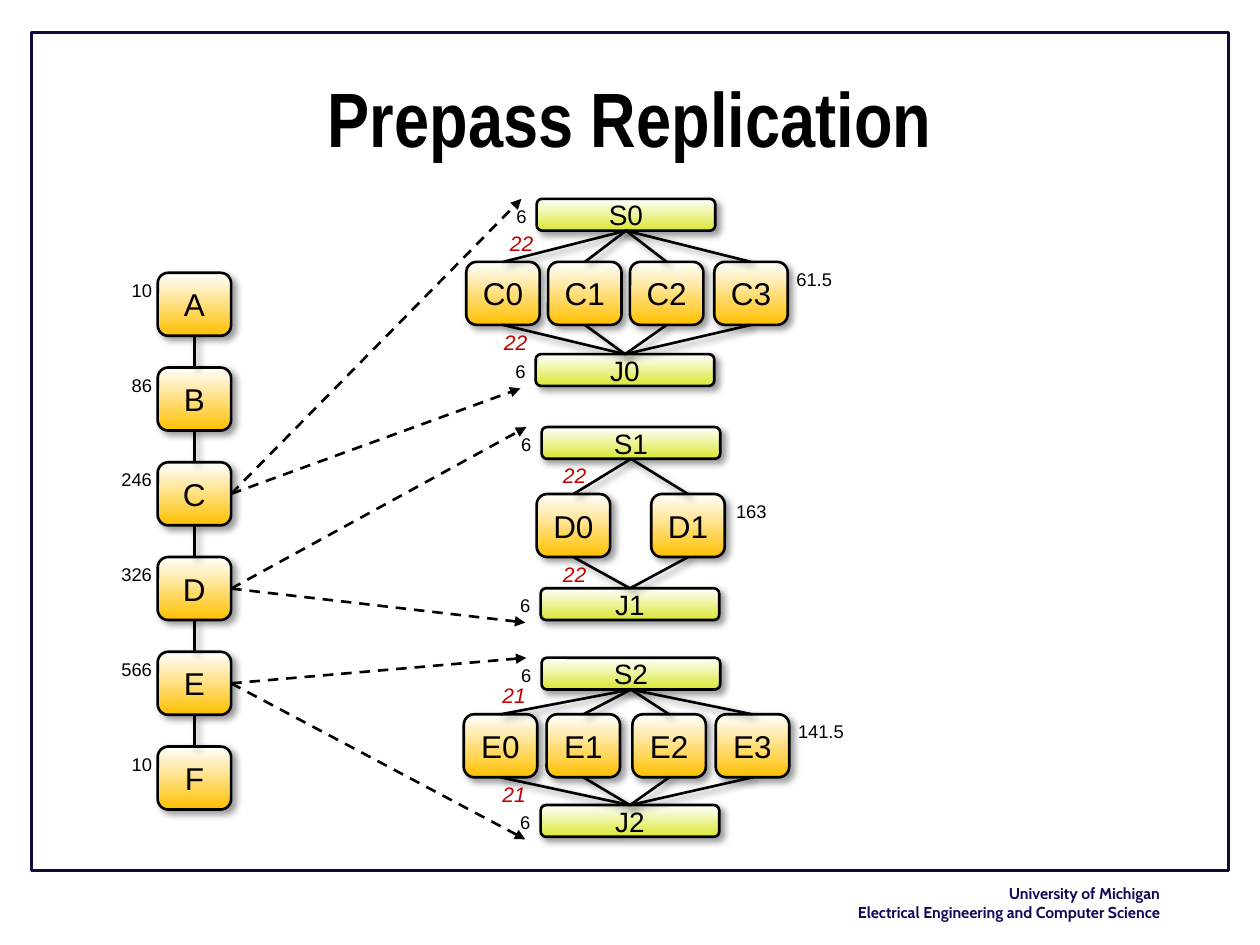
from dataclasses import dataclass
from math import ceil

from lxml import etree
from pptx import Presentation
from pptx.dml.color import RGBColor
from pptx.enum import dml, shapes, text
from pptx.oxml import ns
from pptx.util import Cm, Pt

BLACK = RGBColor(0x00, 0x00, 0x00)
WHITE = RGBColor(0xFF, 0xFF, 0xFF)
ORANGE = RGBColor(0xFF, 0xC0, 0x00)
LIME = RGBColor(0xDA, 0xE7, 0x31)
RED = RGBColor(0xC0, 0x00, 0x00)
FRAME_NAVY = RGBColor(0x10, 0x09, 0x3A)
FOOTER_NAVY = RGBColor(0x0F, 0x09, 0x58)

# All lengths below are in centimetres.
NODE_WIDTH, NODE_HEIGHT = 1.48, 1.27
BAR_WIDTH, BAR_HEIGHT = 3.6, 0.64
CHAIN_LEFT, CHAIN_TOP, CHAIN_PITCH = 3.18, 5.5, 1.91
WEIGHT_HEIGHT, COST_HEIGHT = 0.71, 0.76
TOP, BOTTOM, RIGHT = 0, 2, 3


@dataclass
class Stage:
    name: str
    weight: str


@dataclass
class Replication:
    """A stage split into parallel copies between a split and a join bar."""
    source: str
    index: int
    split_left: float
    split_top: float
    node_top: float
    join_top: float
    node_lefts: list[float]
    node_weight: str
    cost: str
    cost_lefts: tuple[float, float]


STAGES = [Stage("A", "10"), Stage("B", "86"), Stage("C", "246"),
          Stage("D", "326"), Stage("E", "566"), Stage("F", "10")]
REPLICATIONS = [
    Replication("C", 0, 10.82, 4.01, 5.28, 7.14, [9.4, 11.05, 12.7, 14.4],
                "61.5", "22", (10.03, 9.91)),
    Replication("D", 1, 10.92, 8.61, 9.96, 11.86, [10.82, 13.13],
                "163", "22", (11.1, 11.1)),
    Replication("E", 2, 10.92, 13.26, 14.4, 16.23, [9.35, 11.02, 12.75, 14.43],
                "141.5", "21", (9.88, 9.88)),
]


def add_soft_shadow(effects) -> None:
    shadow = etree.SubElement(effects, ns.qn("a:outerShdw"), blurRad=str(Pt(4)),
                              dist=str(Pt(3)), dir="2700000", algn="tl", rotWithShape="0")
    color = etree.SubElement(shadow, ns.qn("a:srgbClr"), val="000000")
    etree.SubElement(color, ns.qn("a:alpha"), val="40000")


def add_box(slide, left: float, top: float, width: float, height: float,
            name: str, color: RGBColor, size: int):
    """Add a rounded box that fades from white down to the colour."""
    box = slide.shapes.add_shape(shapes.MSO_SHAPE.ROUNDED_RECTANGLE,
                                 Cm(left), Cm(top), Cm(width), Cm(height))
    box.fill.gradient()
    box.fill.gradient_angle = 270
    for stop, stop_color in zip(box.fill.gradient_stops, (WHITE, color)):
        stop.color.rgb = stop_color
    box.line.color.rgb = BLACK
    box.line.width = Pt(1.5)
    box.shadow.inherit = False
    add_soft_shadow(box._element.spPr.find(ns.qn("a:effectLst")))
    frame = box.text_frame
    frame.margin_left = frame.margin_right = frame.margin_top = frame.margin_bottom = 0
    frame.word_wrap = False
    frame.vertical_anchor = text.MSO_ANCHOR.MIDDLE
    write(frame.paragraphs[0], name, size, align=text.PP_ALIGN.CENTER)
    return box


def add_node(slide, left: float, top: float, name: str):
    return add_box(slide, left, top, NODE_WIDTH, NODE_HEIGHT, name, ORANGE, 18)


def add_bar(slide, left: float, top: float, name: str):
    return add_box(slide, left, top, BAR_WIDTH, BAR_HEIGHT, name, LIME, 16)


def write(paragraph, words: str, size: float, color: RGBColor = BLACK, font: str = "Arial",
          align=None, bold: bool = False, italic: bool = False) -> None:
    paragraph.text = words
    paragraph.alignment = align
    paragraph.font.name = font
    paragraph.font.size = Pt(size)
    paragraph.font.color.rgb = color
    paragraph.font.bold = bold
    paragraph.font.italic = italic


def add_text_box(slide, left: float, top: float, width: float, height: float):
    box = slide.shapes.add_textbox(Cm(left), Cm(top), Cm(width), Cm(height))
    box.text_frame.word_wrap = True
    return box.text_frame


def weight_width(weight: str) -> float:
    return 0.85 + 0.21 * ceil(len(weight) / 2)


def add_weight(slide, left: float, top: float, weight: str) -> None:
    frame = add_text_box(slide, left, top, weight_width(weight), WEIGHT_HEIGHT)
    write(frame.paragraphs[0], weight, 10.5, align=text.PP_ALIGN.CENTER)


def add_cost(slide, left: float, top: float, cost: str) -> None:
    frame = add_text_box(slide, left, top, 1.06, COST_HEIGHT)
    write(frame.paragraphs[0], cost, 12, RED, italic=True)


def add_line(slide, start, start_side: int, end_x: float = 0, end_y: float = 0):
    line = slide.shapes.add_connector(shapes.MSO_CONNECTOR.STRAIGHT, 0, 0, Cm(end_x), Cm(end_y))
    line.begin_connect(start, start_side)
    line.line.color.rgb = BLACK
    line.line.width = Pt(1.5)
    effects = etree.SubElement(line._element.spPr, ns.qn("a:effectLst"))
    return line, effects


def link(slide, upper, lower) -> None:
    """Join the bottom of one box to the top of another."""
    line, effects = add_line(slide, upper, BOTTOM)
    line.end_connect(lower, TOP)
    add_soft_shadow(effects)


def add_dashed_arrow(slide, start, end_x: float, end_y: float) -> None:
    line, _ = add_line(slide, start, RIGHT, end_x, end_y)
    line.line.dash_style = dml.MSO_LINE.DASH
    etree.SubElement(line.line._get_or_add_ln(), ns.qn("a:tailEnd"), type="triangle")


def add_page_furniture(slide) -> None:
    border = slide.shapes.add_shape(shapes.MSO_SHAPE.RECTANGLE,
                                    Cm(0.64), Cm(0.66), Cm(24.13), Cm(16.89))
    border.fill.background()
    border.line.color.rgb = FRAME_NAVY
    border.line.width = Pt(1.5)
    border.shadow.inherit = False

    footer = add_text_box(slide, 15.88, 17.7, 7.75, 1.02)
    footer.word_wrap = False
    write(footer.paragraphs[0], "University of Michigan", 9, FOOTER_NAVY, "Cabin",
          text.PP_ALIGN.RIGHT, bold=True)
    write(footer.add_paragraph(), "Electrical Engineering and Computer Science", 9,
          FOOTER_NAVY, "Cabin", text.PP_ALIGN.RIGHT, bold=True)

    title = add_text_box(slide, 1.27, 0.76, 22.86, 3.18)
    title.vertical_anchor = text.MSO_ANCHOR.MIDDLE
    write(title.paragraphs[0], "Prepass Replication", 44, font="Arial Narrow",
          align=text.PP_ALIGN.CENTER, bold=True)


def add_chain(slide) -> dict:
    nodes = {}
    previous = None
    for position, stage in enumerate(STAGES):
        top = CHAIN_TOP + position * CHAIN_PITCH
        node = nodes[stage.name] = add_node(slide, CHAIN_LEFT, top, stage.name)
        add_weight(slide, CHAIN_LEFT + 0.21 - weight_width(stage.weight), top, stage.weight)
        if previous is not None:
            link(slide, previous, node)
        previous = node
    return nodes


def add_replication(slide, group: Replication, source) -> None:
    join_left = group.split_left - 0.02
    split = add_bar(slide, group.split_left, group.split_top, f"S{group.index}")
    join = add_bar(slide, join_left, group.join_top, f"J{group.index}")
    for number, left in enumerate(group.node_lefts):
        node = add_node(slide, left, group.node_top, f"{group.source}{number}")
        link(slide, split, node)
        link(slide, node, join)
    add_weight(slide, group.split_left - 0.84, group.split_top, "6")
    add_weight(slide, join_left - 0.84, group.join_top, "6")
    add_weight(slide, group.node_lefts[-1] + NODE_WIDTH - 0.1, group.node_top, group.node_weight)
    cost_tops = (group.node_top - COST_HEIGHT, group.node_top + NODE_HEIGHT - 0.03)
    for left, top in zip(group.cost_lefts, cost_tops):
        add_cost(slide, left, top, group.cost)
    add_dashed_arrow(slide, source, group.split_left - 0.31, group.split_top)
    add_dashed_arrow(slide, source, join_left - 0.31, group.join_top + 0.69)


def main() -> None:
    presentation = Presentation()
    presentation.slide_width, presentation.slide_height = Cm(25.4), Cm(19.05)
    slide = presentation.slides.add_slide(presentation.slide_layouts[6])
    add_page_furniture(slide)
    chain = add_chain(slide)
    for group in REPLICATIONS:
        add_replication(slide, group, chain[group.source])
    presentation.save("out.pptx")


if __name__ == "__main__":
    main()
